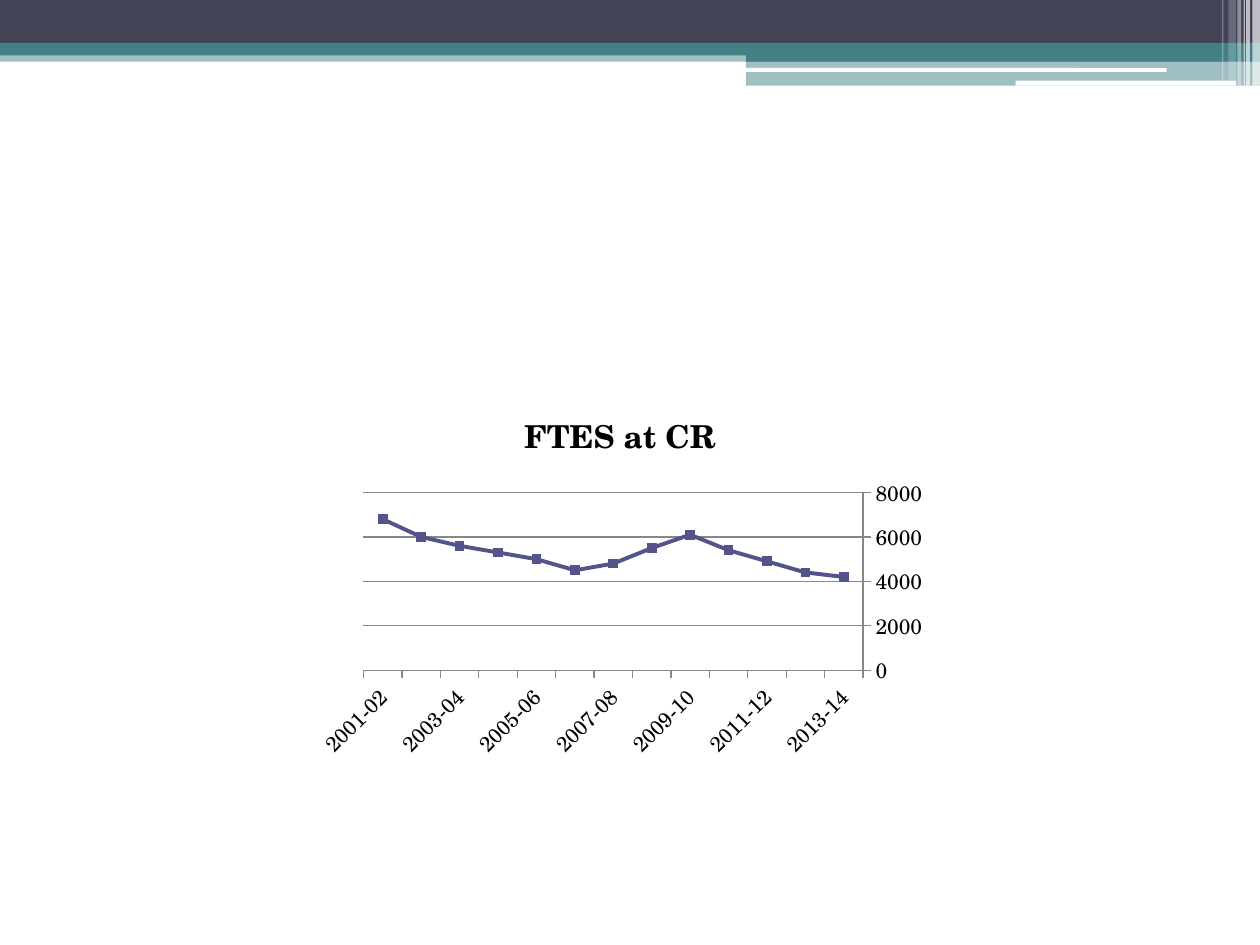
import pptx
import pptx.chart.data
import pptx.dml.color
import pptx.enum.chart
import pptx.enum.shapes
import pptx.oxml
import pptx.oxml.ns
import pptx.util

Inches = pptx.util.Inches
Pt = pptx.util.Pt
FONT = "TeX Gyre Schola"
TEAL, NAVY, WHITE, GRAY = "438086", "424456", "FFFFFF", "878787"

bands = [
    ("RECTANGLE", 0, 0.4, 10, 0.09, TEAL, 50),
    ("RECTANGLE", 0, 0, 10, 0.34, NAVY, 100),
    ("RECTANGLE", 0, 0.34, 10, 0.1, TEAL, 100),
    ("RECTANGLE", 5.92, 0.39, 4.08, 0.1, TEAL, 100),
    ("RECTANGLE", 5.92, 0.48, 4.08, 0.2, TEAL, 50),
    ("ROUNDED_RECTANGLE", 5.91, 0.54, 3.35, 0.03, WHITE, 100),
    ("ROUNDED_RECTANGLE", 8.06, 0.64, 1.75, 0.04, WHITE, 100),
]
stripes = [
    (9.94, 0.06, 0.68, 65),
    (9.89, 0.03, 0.68, 65),
    (9.87, 0.01, 0.68, 60),
    (9.82, 0.03, 0.68, 40),
    (9.75, 0.06, 0.64, 20),
    (9.7, 0.01, 0.64, 30),
]
enrollment_title = "FTES at CR"
enrollment = [4200, 4400, 4900, 5400, 6100, 5500, 4800,
              4500, 5000, 5300, 5600, 6000, 6800]
last_year = 2013
years = [f"{last_year - i}-{(last_year - i + 1) % 100:02d}" for i in range(len(enrollment))]


def rgb(color):
    return pptx.dml.color.RGBColor.from_string(color)


def set_all(target, values):
    for name, value in values.items():
        setattr(target, name, value)


def style_font(font, size, bold=False):
    set_all(font, {"name": FONT, "size": Pt(size), "bold": bold})
    font.color.rgb = rgb("000000")


def style_line(line, color, width):
    line.color.rgb = rgb(color)
    line.width = Pt(width)


def add_band(slide, preset, left, top, width, height, color, opacity):
    kind = getattr(pptx.enum.shapes.MSO_SHAPE, preset)
    band = slide.shapes.add_shape(kind, *map(Inches, (left, top, width, height)))
    band.shadow.inherit = False
    band.line.fill.background()
    band.fill.solid()
    band.fill.fore_color.rgb = rgb(color)
    if opacity < 100:
        tint = band.fill._xPr.find(".//" + pptx.oxml.ns.qn("a:srgbClr"))
        tint.append(pptx.oxml.parse_xml(
            f'<a:alpha {pptx.oxml.ns.nsdecls("a")} val="{opacity * 1000}"/>'))


def add_enrollment_chart(slide):
    data = pptx.chart.data.CategoryChartData()
    data.categories = years
    data.add_series("Series 1", enrollment)
    chart = slide.shapes.add_chart(
        pptx.enum.chart.XL_CHART_TYPE.LINE_MARKERS,
        Inches(2.42), Inches(3.08), Inches(5), Inches(3), data).chart
    chart.has_legend = False
    style_font(chart.font, 10)
    chart.has_title = True
    chart.chart_title.include_in_layout = False
    heading = chart.chart_title.text_frame
    heading.text = enrollment_title
    style_font(heading.paragraphs[0].runs[0].font, 18, True)

    ticks = pptx.enum.chart.XL_TICK_MARK
    for axis in (chart.category_axis, chart.value_axis):
        set_all(axis, {"major_tick_mark": ticks.OUTSIDE, "minor_tick_mark": ticks.NONE})
        style_font(axis.tick_labels.font, 12)
        style_line(axis.format.line, GRAY, 0.75)
    chart.category_axis.reverse_order = True
    set_all(chart.value_axis, {"minimum_scale": 0, "maximum_scale": 8000,
                               "major_unit": 2000, "has_major_gridlines": True})
    style_line(chart.value_axis.major_gridlines.format.line, GRAY, 0.75)

    plot = chart.plots[0]
    plot.vary_by_categories = False
    trend = plot.series[0]
    trend.smooth = False
    style_line(trend.format.line, "53548A", 2.25)
    set_all(trend.marker, {"style": pptx.enum.chart.XL_MARKER_STYLE.SQUARE, "size": 5})
    trend.marker.format.fill.solid()
    trend.marker.format.fill.fore_color.rgb = rgb("53548A")
    style_line(trend.marker.format.line, "53548A", 0.75)


def main():
    deck = pptx.Presentation()
    set_all(deck, {"slide_width": Inches(10), "slide_height": Inches(7.5)})
    slide = deck.slides.add_slide(deck.slide_layouts[6])
    for band in bands:
        add_band(slide, *band)
    for left, width, height, opacity in stripes:
        add_band(slide, "RECTANGLE", left, 0, width, height, WHITE, opacity)
    add_enrollment_chart(slide)
    deck.save("out.pptx")


if __name__ == "__main__":
    main()
